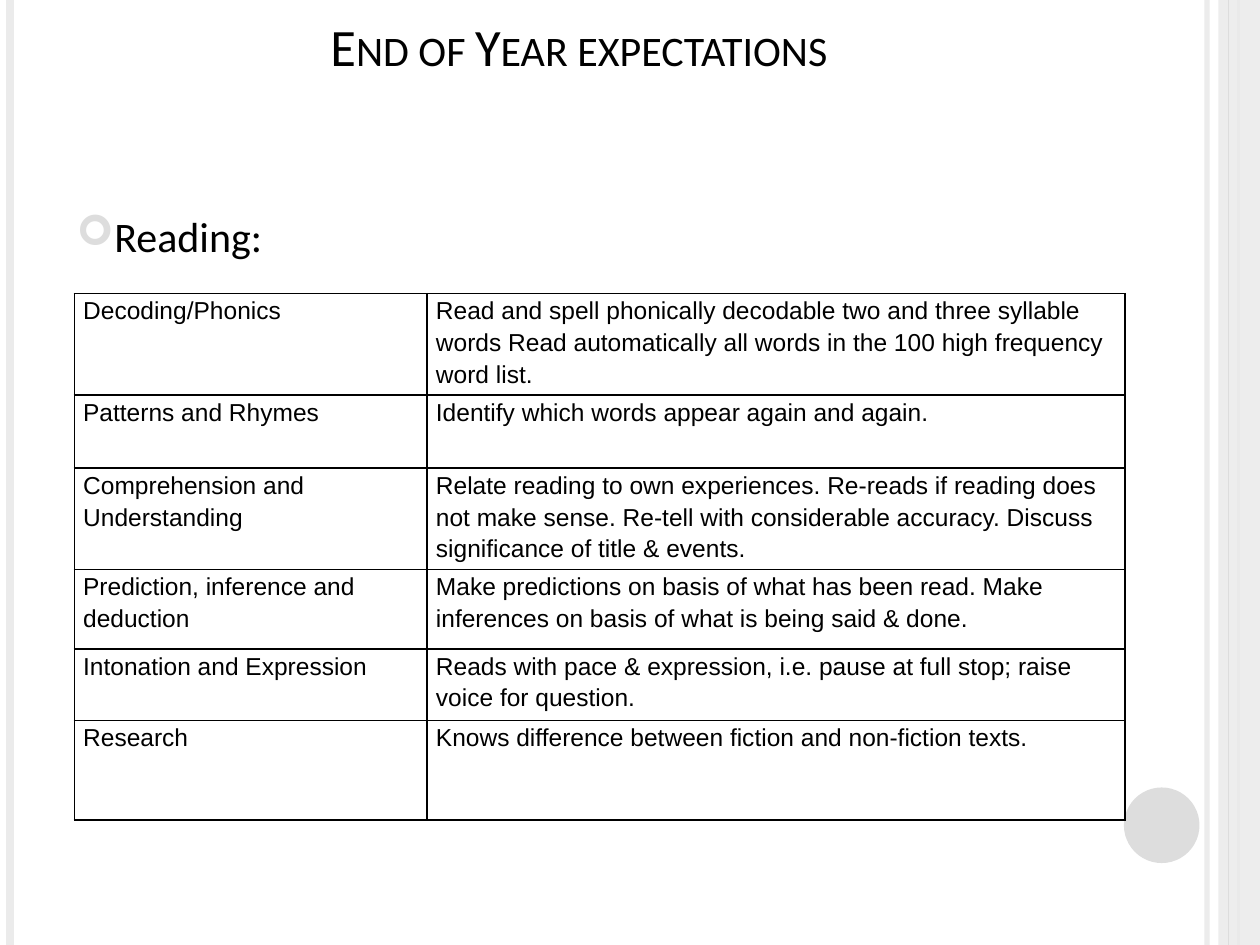
import pptx
import pptx.dml.color
import pptx.enum.shapes
import pptx.enum.text
import pptx.oxml
import pptx.oxml.ns
import pptx.util
from pptx.dml.color import RGBColor
from pptx.util import Inches

BLACK = RGBColor(0x00, 0x00, 0x00)
WHITE = RGBColor(0xFF, 0xFF, 0xFF)
PALE_GRAY = RGBColor(0xEB, 0xEB, 0xEB)
GRAY = RGBColor(0xDD, 0xDD, 0xDD)


def write_text(frame, text, *, size, font, align=None, spacing=None, small_caps=False):
    frame.word_wrap = True
    paragraph = frame.paragraphs[0]
    paragraph.alignment = align
    paragraph.line_spacing = spacing
    run = paragraph.add_run()
    run.text = text
    run.font.size = pptx.util.Pt(size)
    run.font.name = font
    run.font.color.rgb = BLACK
    if small_caps:
        run.font._element.set("cap", "small")
    return paragraph


def append_xml(parent, xml):
    namespace = pptx.oxml.ns.nsdecls("a")
    for element in list(pptx.oxml.parse_xml(f"<a:group {namespace}>{xml}</a:group>")):
        parent.append(element)


presentation = pptx.Presentation()
presentation.slide_width = Inches(10)
presentation.slide_height = Inches(7.5)
slide = presentation.slides.add_slide(presentation.slide_layouts[6])
slide.background.fill.solid()
slide.background.fill.fore_color.rgb = WHITE

shape_types = pptx.enum.shapes.MSO_SHAPE
side_shapes = [
    ("line", 9.58, PALE_GRAY, 3, 93),
    ("line", 0.08, PALE_GRAY, 4.5, 100),
    ("line", 9.83, GRAY, 1.5, 100),
    (shape_types.RECTANGLE, (9.67, 0, 0.33, 7.5), PALE_GRAY, None, 86),
    ("line", 9.75, GRAY, 0.75, 100),
    (shape_types.OVAL, (8.92, 6.25, 0.6, 0.6), GRAY, None, 100),
]
for kind, place, color, width, opacity in side_shapes:
    if kind == "line":
        shape = slide.shapes.add_connector(
            pptx.enum.shapes.MSO_CONNECTOR.STRAIGHT,
            Inches(place), Inches(0), Inches(place), Inches(7.5))
        shape.line.color.rgb = color
        shape.line.width = pptx.util.Pt(width)
        append_xml(shape._element.spPr, "<a:effectLst/>")
    else:
        shape = slide.shapes.add_shape(kind, *map(Inches, place))
        shape.shadow.inherit = False
        shape.fill.solid()
        shape.fill.fore_color.rgb = color
        shape.line.fill.background()
    if opacity < 100:
        color_element = next(shape._element.spPr.iter(pptx.oxml.ns.qn("a:srgbClr")))
        append_xml(color_element, f'<a:alpha val="{opacity * 1000}"/>')

title = slide.shapes.add_textbox(Inches(0.51), Inches(0.21), Inches(8.17), Inches(0.95))
title.text_frame.vertical_anchor = pptx.enum.text.MSO_ANCHOR.BOTTOM
title.text_frame.margin_bottom = Inches(0.55)
write_text(title.text_frame, "End of Year expectations", size=30, font="Calibri",
           align=pptx.enum.text.PP_ALIGN.CENTER, small_caps=True)

body = slide.shapes.add_textbox(Inches(0.51), Inches(1.62), Inches(8.17), Inches(5.33))
heading = write_text(body.text_frame, "Reading:", size=24, font="Calibri")
properties = heading._element.get_or_add_pPr()
properties.set("marL", str(Inches(0.3)))
properties.set("indent", str(Inches(-0.3)))
append_xml(properties,
           f'<a:buClr><a:srgbClr val="{GRAY}"/></a:buClr>'
           '<a:buFont typeface="Wingdings" pitchFamily="2" charset="2"/>'
           '<a:buChar char="¢"/>')

expectations = [
    (0.59, "Decoding/Phonics",
     "Read and spell phonically decodable two and three syllable words "
     "Read automatically all words in the 100 high frequency word list."),
    (0.58, "Patterns and Rhymes", "Identify which words appear again and again."),
    (0.8, "Comprehension and Understanding",
     "Relate reading to own experiences. Re-reads if reading does not make sense. "
     "Re-tell with considerable accuracy. Discuss significance of title & events."),
    (0.63, "Prediction, inference and deduction",
     "Make predictions on basis of what has been read. "
     "Make inferences on basis of what is being said & done."),
    (0.57, "Intonation and Expression",
     "Reads with pace & expression, i.e. pause at full stop; raise voice for question."),
    (0.79, "Research", "Knows difference between fiction and non-fiction texts."),
]
table_frame = slide.shapes.add_table(
    len(expectations), 2, Inches(0.59), Inches(2.33), Inches(8.34), Inches(3.96))
table = table_frame.table
table.first_row = False
table.horz_banding = False
for column, width in zip(table.columns, (2.8, 5.54)):
    column.width = Inches(width)
for row, (height, *texts) in zip(table.rows, expectations):
    row.height = Inches(height)
    for cell, text in zip(row.cells, texts):
        cell.margin_left = cell.margin_right = Inches(0.07)
        cell.margin_top = cell.margin_bottom = Inches(0)
        write_text(cell.text_frame, text, size=14, font="Arial", spacing=1.15)
        for side in ("lnL", "lnR", "lnT", "lnB"):
            append_xml(cell._tc.get_or_add_tcPr(),
                       f'<a:{side} w="{pptx.util.Pt(1)}"><a:solidFill>'
                       f'<a:srgbClr val="{BLACK}"/></a:solidFill></a:{side}>')
        cell.fill.background()
table_frame.width = table_frame.height = Inches(3.28)

presentation.save("out.pptx")
